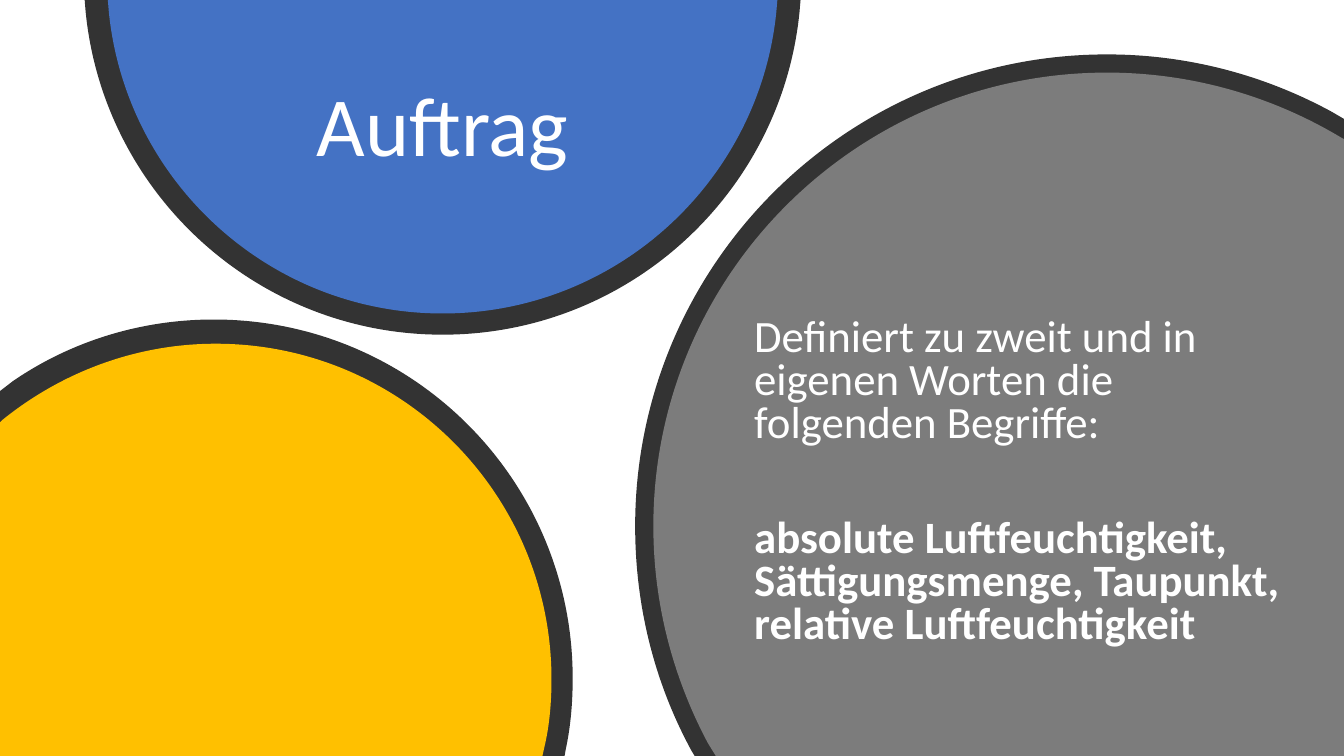
import pptx
import pptx.dml.color
import pptx.enum.text
import pptx.oxml
import pptx.oxml.ns
import pptx.util

Inches, Pt = pptx.util.Inches, pptx.util.Pt
PP_ALIGN, MSO_ANCHOR = pptx.enum.text.PP_ALIGN, pptx.enum.text.MSO_ANCHOR
qn, NS = pptx.oxml.ns.qn, pptx.oxml.ns.nsdecls("a")
W, H = 13.33, 7.5


def rgb(value):
    return pptx.dml.color.RGBColor.from_string(value)


def add_text(p, text, size, bold, fmt):
    for name, value in fmt.items():
        setattr(p, name, value)
    r = p.add_run()
    r.text = text
    for name, value in {"name": "Calibri", "size": Pt(size), "bold": bold}.items():
        setattr(r.font, name, value)
    r.font.color.rgb = rgb("FFFFFF")


prs = pptx.Presentation()
prs.slide_width, prs.slide_height = Inches(W), Inches(H)
s = prs.slides.add_slide(prs.slide_layouts[1])

# Circles cut off at the slide edges: fill, opacity, start, then segments
# (two numbers make a line, six numbers make a curve)
circles = [
    ("000000", 80, (0.84, 0), [
        (7.94, 0), (7.93, 0.12),
        (7.75, 1.92, 6.23, 3.32, 4.39, 3.32), (2.55, 3.32, 1.03, 1.92, 0.85, 0.12)]),
    ("4472C4", 100, (1.07, 0), [
        (7.71, 0), (7.7, 0.12),
        (7.53, 1.8, 6.11, 3.11, 4.39, 3.11), (2.67, 3.11, 1.25, 1.8, 1.08, 0.12)]),
    ("000000", 80, (2.12, 3.17), [
        (4.09, 3.17, 5.68, 4.76, 5.68, 6.73), (5.68, 6.97, 5.66, 7.21, 5.61, 7.44),
        (5.6, H), (0, H), (0, 3.88), (0.13, 3.78),
        (0.7, 3.39, 1.39, 3.17, 2.12, 3.17)]),
    ("FFC000", 100, (2.14, 3.41), [
        (3.98, 3.41, 5.47, 4.9, 5.47, 6.74), (5.47, 6.97, 5.45, 7.2, 5.4, 7.41),
        (5.38, H), (0, H), (0, 4.19), (0.02, 4.17),
        (0.6, 3.7, 1.34, 3.41, 2.14, 3.41)]),
    ("000000", 80, (10.98, 0.54), [
        (11.79, 0.54, 12.55, 0.75, 13.21, 1.11),
        (W, 1.18), (W, H), (6.89, H), (6.86, 7.45),
        (6.5, 6.79, 6.3, 6.03, 6.3, 5.22), (6.3, 2.64, 8.39, 0.54, 10.98, 0.54)]),
    ("7C7C7C", 100, (10.98, 0.72), [
        (11.83, 0.72, 12.63, 0.96, 13.31, 1.37),
        (W, 1.38), (W, H), (7.1, H), (7.02, 7.37),
        (6.68, 6.73, 6.48, 6, 6.48, 5.22), (6.48, 2.74, 8.49, 0.72, 10.98, 0.72)]),
]
for color, opacity, start, segments in circles:
    points = [(Inches(seg[i]), Inches(seg[i + 1])) for seg in segments for i in range(0, len(seg), 2)]
    fb = s.shapes.build_freeform(Inches(start[0]), Inches(start[1]))
    fb.add_line_segments(points, close=True)
    sp = fb.convert_to_shape()
    sp.shadow.inherit = False
    sp.line.fill.background()
    sp.fill.solid()
    sp.fill.fore_color.rgb = rgb(color)
    if opacity < 100:
        clr = sp.element.spPr.find(".//" + qn("a:srgbClr"))
        clr.append(pptx.oxml.parse_xml(f'<a:alpha {NS} val="{opacity * 1000}"/>'))

    # Join each three points of a curve into one Bezier segment
    lines = iter(sp.element.findall(".//" + qn("a:lnTo")))
    for seg in segments:
        first = next(lines)
        if len(seg) == 6:
            curve = pptx.oxml.parse_xml(f"<a:cubicBezTo {NS}/>")
            first.addprevious(curve)
            for line in (first, next(lines), next(lines)):
                curve.append(line[0])
                line.getparent().remove(line)

# Title and body placeholders, in front of the circles
title, body = s.shapes.title, s.placeholders[1]
boxes = [
    (title, 1.66, -0.34, 5.46, 2.12, MSO_ANCHOR.BOTTOM),
    (body, 7.38, 3.11, 5.46, 3.55, MSO_ANCHOR.TOP),
]
for sp, left, top, width, height, anchor in boxes:
    sp.left, sp.top, sp.width, sp.height = map(Inches, (left, top, width, height))
    fmt = {"word_wrap": True, "vertical_anchor": anchor, "auto_size": pptx.enum.text.MSO_AUTO_SIZE.NONE}
    for name, value in fmt.items():
        setattr(sp.text_frame, name, value)
    sp.element.getparent().append(sp.element)

add_text(title.text_frame.paragraphs[0], "Auftrag", 60, False,
         {"alignment": PP_ALIGN.CENTER, "line_spacing": 0.9})

# Task and terms, without bullets
paragraphs = [
    ("Definiert zu zweit und in eigenen Worten die folgenden Begriffe:", False, 10),
    ("absolute Luftfeuchtigkeit, Sättigungsmenge, Taupunkt, relative Luftfeuchtigkeit", True, 51),
]
tf = body.text_frame
for i, (text, bold, before) in enumerate(paragraphs):
    p = tf.add_paragraph() if i else tf.paragraphs[0]
    add_text(p, text, 32, bold,
             {"alignment": PP_ALIGN.LEFT, "line_spacing": 0.8, "space_before": Pt(before)})
    pPr = p._p.get_or_add_pPr()
    pPr.set("marL", "0")
    pPr.set("indent", "0")
    pPr.append(pptx.oxml.parse_xml(f"<a:buNone {NS}/>"))

prs.save("out.pptx")
